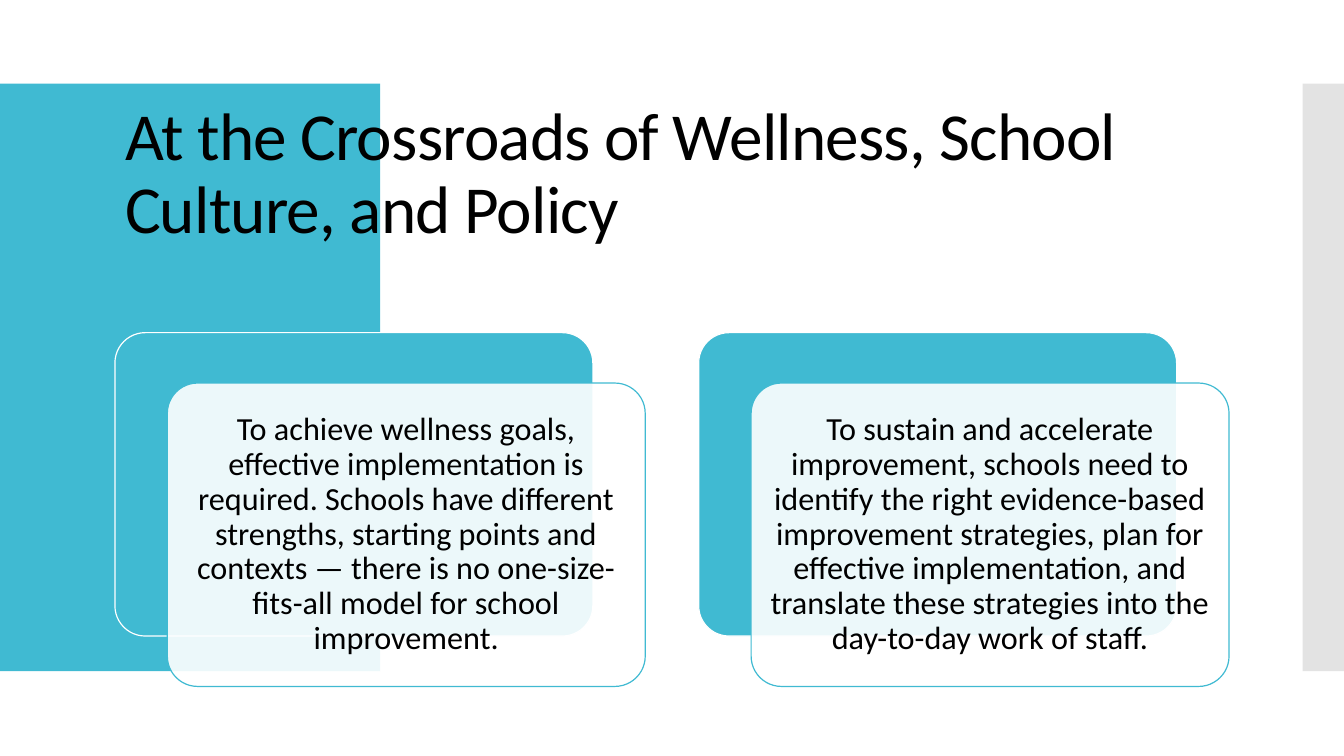
import dataclasses
import lxml.etree
import pptx
import pptx.dml.color
import pptx.enum.shapes
import pptx.enum.text
import pptx.oxml.ns
import pptx.util

Inches = pptx.util.Inches
Shape = pptx.enum.shapes.MSO_SHAPE
Align = pptx.enum.text.PP_ALIGN


@dataclasses.dataclass(frozen=True)
class Theme:
    font: str = "Calibri"
    teal: str = "40BAD2"
    grey: str = "C8C8C8"
    white: str = "FFFFFF"
    ink: str = "000000"
    head: float = 48
    body: float = 23
    rule: float = 0.85


class Deck:
    def __init__(self, theme):
        self.theme = theme
        self.show = pptx.Presentation()
        self.show.slide_width = Inches(13.33)
        self.show.slide_height = Inches(7.5)
        self.slide = self.show.slides.add_slide(self.show.slide_layouts[5])

    def block(self, kind, box, fill, line=None, alpha=100):
        shape = self.slide.shapes.add_shape(kind, *map(Inches, box))
        shape.shadow.inherit = False
        shape.fill.solid()
        shape.fill.fore_color.rgb = pptx.dml.color.RGBColor.from_string(fill)
        if alpha < 100:
            tint = shape._element.spPr.find(".//" + pptx.oxml.ns.qn("a:srgbClr"))
            node = lxml.etree.SubElement(tint, pptx.oxml.ns.qn("a:alpha"))
            node.set("val", str(alpha * 1000))
        if line:
            shape.line.color.rgb = pptx.dml.color.RGBColor.from_string(line)
            shape.line.width = pptx.util.Pt(self.theme.rule)
        else:
            shape.line.fill.background()
        return shape

    def panel(self, box, fill, line, alpha=100):
        shape = self.block(Shape.ROUNDED_RECTANGLE, box, fill, line, alpha)
        shape.adjustments[0] = 0.1

    def put(self, shape, text, size, align):
        frame = shape.text_frame
        frame.word_wrap = True
        frame.auto_size = pptx.enum.text.MSO_AUTO_SIZE.NONE
        frame.vertical_anchor = pptx.enum.text.MSO_ANCHOR.MIDDLE
        para = frame.paragraphs[0]
        para.alignment = align
        para.line_spacing = 0.9
        run = para.add_run()
        run.text = text
        run.font.name = self.theme.font
        run.font.size = pptx.util.Pt(size)
        run.font.color.rgb = pptx.dml.color.RGBColor.from_string(self.theme.ink)
        return run

    def title(self, box, text):
        shape = self.slide.shapes.title
        shape.left, shape.top, shape.width, shape.height = map(Inches, box)
        run = self.put(shape, text, self.theme.head, Align.LEFT)
        run.font._element.set("spc", "-60")
        self.slide.shapes._spTree.append(shape._element)

    def label(self, box, text):
        shape = self.slide.shapes.add_textbox(*map(Inches, box))
        frame = shape.text_frame
        frame.margin_left = frame.margin_right = Inches(0.08)
        frame.margin_top = frame.margin_bottom = Inches(0.1)
        self.put(shape, text, self.theme.body, Align.CENTER)

    def card(self, left, top, text):
        wide, high, pad = 4.74, 3.01, 0.09
        self.panel((left, top, wide, high), self.theme.teal, self.theme.white)
        left, top = left + 0.52, top + 0.5
        self.panel((left, top, wide, high), self.theme.white, self.theme.teal, 90)
        self.label((left + pad, top + pad, wide - 2 * pad, high - 2 * pad), text)


def main():
    theme = Theme()
    deck = Deck(theme)
    deck.block(Shape.RECTANGLE, (0, 0.83, 3.77, 5.83), theme.teal)
    deck.block(Shape.RECTANGLE, (12.92, 0.83, 0.41, 5.83), theme.grey, alpha=50)
    deck.title(
        (1.14, 0.89, 11.13, 1.7),
        "At the Crossroads of Wellness, School Culture, and Policy",
    )
    cards = (
        "To achieve wellness goals, effective implementation is required. "
        "Schools have different strengths, starting points and contexts — "
        "there is no one-size-fits-all model for school improvement.",
        "To sustain and accelerate improvement, schools need to identify the "
        "right evidence-based improvement strategies, plan for effective "
        "implementation, and translate these strategies into the day-to-day "
        "work of staff.",
    )
    for spot, text in enumerate(cards):
        deck.card(1.14 + 5.79 * spot, 3.3, text)
    deck.show.save("out.pptx")


if __name__ == "__main__":
    main()
